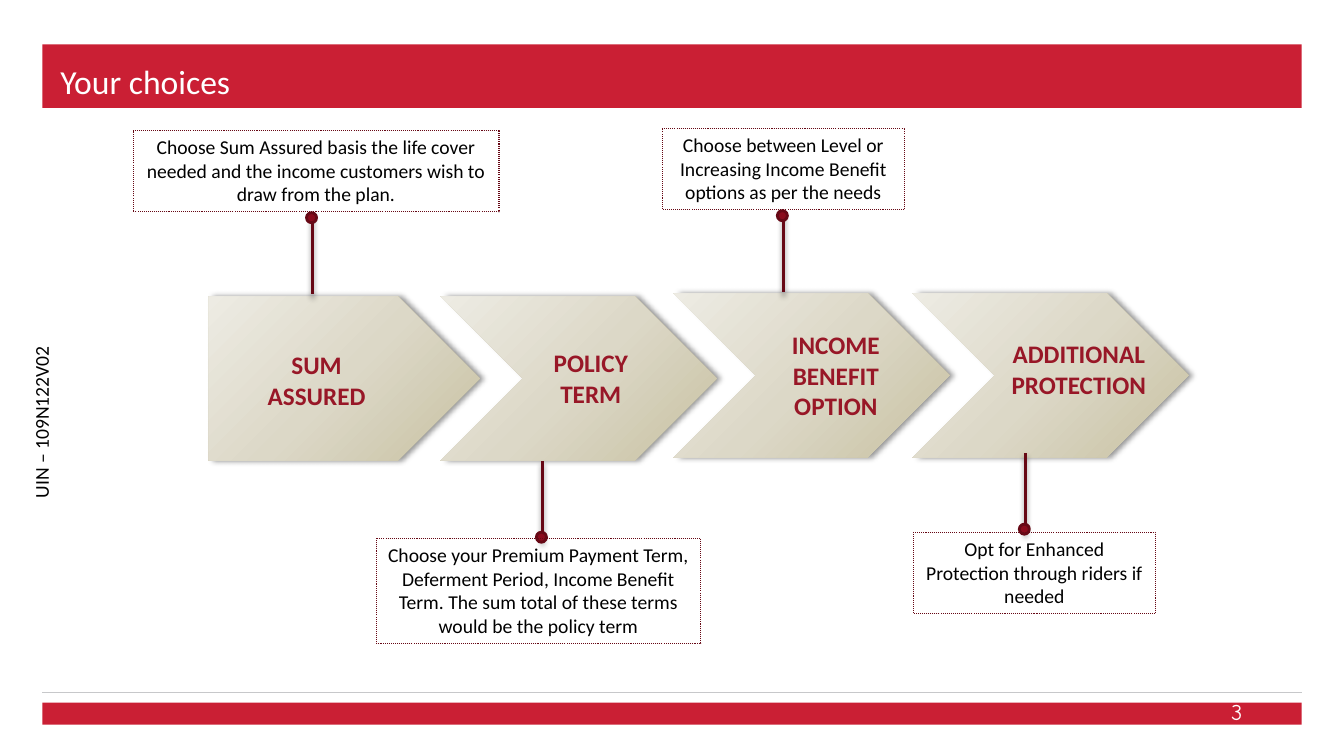
"""Build the "Your choices" slide: four steps, each with a callout."""
from pptx import Presentation
from pptx.dml.color import RGBColor
from pptx.enum.dml import MSO_LINE
from pptx.enum.shapes import MSO_CONNECTOR, MSO_SHAPE
from pptx.enum.text import MSO_ANCHOR, PP_ALIGN
from pptx.oxml import parse_xml
from pptx.oxml.ns import nsdecls
from pptx.util import Inches, Pt

RECT, OVAL = MSO_SHAPE.RECTANGLE, MSO_SHAPE.OVAL
PLATE, CHEVRON = MSO_SHAPE.PENTAGON, MSO_SHAPE.CHEVRON
STRAIGHT = MSO_CONNECTOR.STRAIGHT
DOTTED = MSO_LINE.ROUND_DOT
TOP, MIDDLE, BOTTOM = MSO_ANCHOR.TOP, MSO_ANCHOR.MIDDLE, MSO_ANCHOR.BOTTOM
LEFT, CENTER, RIGHT = PP_ALIGN.LEFT, PP_ALIGN.CENTER, PP_ALIGN.RIGHT

RED = RGBColor(0xCA, 0x1F, 0x34)
LABEL_RED = RGBColor(0x98, 0x17, 0x27)
DOT_RED = RGBColor(0x8A, 0x0B, 0x1C)
DOT_EDGE = RGBColor(0x66, 0x08, 0x15)
MAROON = RGBColor(0x67, 0x08, 0x15)
GREY = RGBColor(0xC7, 0xC8, 0xCA)
BLACK = RGBColor(0, 0, 0)
WHITE = RGBColor(0xFF, 0xFF, 0xFF)

GRADIENT = (
    f'<a:gradFill {nsdecls("a")} rotWithShape="1"><a:gsLst>'
    '<a:gs pos="0"><a:srgbClr val="C8C1A2"/></a:gs>'
    '<a:gs pos="50000"><a:srgbClr val="DCD8C7"/></a:gs>'
    '<a:gs pos="100000"><a:srgbClr val="EDEBE3"/></a:gs>'
    '</a:gsLst><a:lin ang="13500000" scaled="0"/></a:gradFill>')


def write(sp, lines, size, color, align=CENTER, anchor=TOP, bold=False, font="Calibri"):
    """Fill a shape with one paragraph per line."""
    tf = sp.text_frame
    tf.word_wrap = True
    tf.vertical_anchor = anchor
    for i, line in enumerate(lines):
        p = tf.paragraphs[0] if i == 0 else tf.add_paragraph()
        p.alignment = align
        r = p.add_run()
        r.text = line
        r.font.name, r.font.size, r.font.bold = font, Pt(size), bold
        r.font.color.rgb = color


def add_effects(sp, angle=None):
    """Give a shape a shadow cast at an angle, or no shadow at all."""
    shadow = "" if angle is None else (
        f'<a:outerShdw blurRad="50800" dist="38100" dir="{angle * 60000}" algn="ctr" '
        'rotWithShape="0"><a:srgbClr val="000000"><a:alpha val="40000"/>'
        '</a:srgbClr></a:outerShdw>')
    sp._element.spPr.append(
        parse_xml(f'<a:effectLst {nsdecls("a")}>{shadow}</a:effectLst>'))


prs = Presentation()
prs.slide_width, prs.slide_height = Inches(13.33), Inches(7.5)
s = prs.slides.add_slide(prs.slide_layouts[6])

for top, height in ((0.44, 0.63), (6.97, 0.22)):
    band = s.shapes.add_shape(RECT, Inches(0.42), Inches(top), Inches(12.49), Inches(height))
    band.shadow.inherit = False
    band.fill.solid()
    band.fill.fore_color.rgb = RED
    band.line.fill.background()

rule = s.shapes.add_connector(STRAIGHT, Inches(0.42), Inches(6.87), Inches(12.91), Inches(6.87))
rule.line.color.rgb = GREY
rule.line.width = Pt(1)
add_effects(rule)

uin = s.shapes.add_textbox(Inches(-2.22), Inches(3.99), Inches(5.29), Inches(0.3))
uin.rotation = 270
uin.text_frame.margin_left = 0
write(uin, ["UIN – 109N122V02"], 14, BLACK, anchor=BOTTOM)
uin.text_frame.paragraphs[0].line_spacing = 0.9

title = s.shapes.add_textbox(Inches(0.5), Inches(0.55), Inches(8.47), Inches(0.41))
write(title, ["Your choices"], 24, WHITE, LEFT)

number = s.shapes.add_textbox(Inches(9.42), Inches(6.86), Inches(3), Inches(0.4))
write(number, ["3"], 16, WHITE, RIGHT, MIDDLE, font="Comic Neue")

steps = [
    (PLATE, 2.07, 2.94, 2.69, ["SUM", "ASSURED"], 3.14, 3.77),
    (CHEVRON, 4.37, 2.94, 2.74, ["POLICY", "TERM"], 5.86, 3.75),
    (CHEVRON, 6.68, 2.91, 2.74, ["INCOME", "BENEFIT", "OPTION"], 8.29, 3.72),
    (CHEVRON, 9.05, 2.91, 2.74, ["ADDITIONAL", "PROTECTION"], 10.7, 3.66),
]
for kind, left, top, width, lines, label_x, label_y in steps:
    arrow = s.shapes.add_shape(kind, Inches(left), Inches(top), Inches(width), Inches(1.63))
    arrow.line.fill.background()
    arrow._element.spPr.prstGeom.addnext(parse_xml(GRADIENT))
    add_effects(arrow, 0)
    label = s.shapes.add_textbox(
        Inches(label_x - 0.9), Inches(label_y - 0.5), Inches(1.8), Inches(1))
    write(label, lines, 18, LABEL_RED, anchor=MIDDLE, bold=True)

callouts = [
    (1.32, 1.29, 3.63, 0.81, 3.1, 2.12, 2.92, 2.11,
     "Choose Sum Assured basis the life cover needed and the income customers wish to "
     "draw from the plan."),
    (3.73, 5.34, 3.22, 1.04, 5.38, 5.37, 4.57, 5.28,
     "Choose your Premium Payment Term, Deferment Period, Income Benefit Term. "
     "The sum total of these terms would be the policy term"),
    (6.57, 1.27, 2.4, 0.81, 7.77, 2.1, 2.9, 2.09,
     "Choose between Level or Increasing Income Benefit options as per the needs"),
    (9.06, 5.28, 2.4, 0.81, 10.17, 5.29, 4.49, 5.2,
     "Opt for Enhanced Protection through riders if needed"),
]
for left, top, width, height, x, start, end, dot_top, text in callouts:
    stem = s.shapes.add_connector(STRAIGHT, Inches(x), Inches(start), Inches(x), Inches(end))
    stem.line.color.rgb = MAROON
    stem.line.width = Pt(2.25)
    add_effects(stem, 90)

    dot = s.shapes.add_shape(OVAL, Inches(x - 0.06), Inches(dot_top), Inches(0.1), Inches(0.1))
    dot.shadow.inherit = False
    dot.fill.solid()
    dot.fill.fore_color.rgb = DOT_RED
    dot.line.color.rgb = DOT_EDGE
    dot.line.width = Pt(2)

    box = s.shapes.add_shape(RECT, Inches(left), Inches(top), Inches(width), Inches(height))
    box.shadow.inherit = False
    box.fill.background()
    box.line.color.rgb = MAROON
    box.line.width = Pt(0.75)
    box.line.dash_style = DOTTED
    write(box, [text], 14, BLACK)

prs.save("out.pptx")
